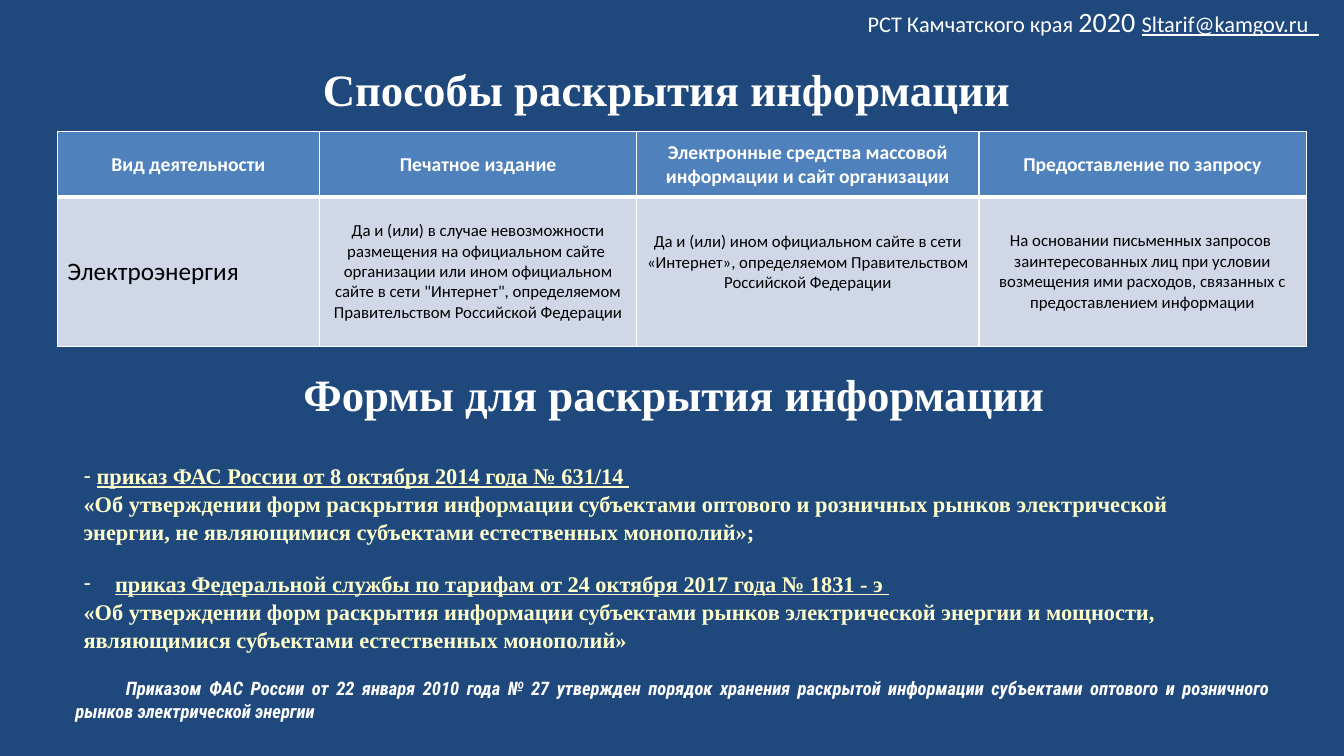
from dataclasses import dataclass

from lxml import etree
from pptx import Presentation
from pptx.dml.color import RGBColor
from pptx.enum import text as t
from pptx.oxml import ns
from pptx.util import Pt


@dataclass(frozen=True)
class Theme:
    """Colours, fonts and type sizes of the slide."""
    back: str = "1F497D"
    head: str = "4F81BD"
    cell: str = "D0D8E8"
    white: str = "FFFFFF"
    black: str = "000000"
    cream: str = "FFFFCC"
    sans: str = "Calibri"
    serif: str = "Times New Roman"
    narrow: str = "Roboto Condensed"
    title: float = 32
    year: float = 20
    row: float = 18
    body: float = 16
    label: float = 14
    note: float = 13.3
    small: float = 12


THEME = Theme()
LEFT, MID, RIGHT, FULL = (t.PP_ALIGN.LEFT, t.PP_ALIGN.CENTER,
                          t.PP_ALIGN.RIGHT, t.PP_ALIGN.JUSTIFY)


def write(frame, runs, size=THEME.body, font=THEME.sans, color=THEME.white,
          bold=False, italic=False, align=LEFT, pitch=1.0, gap=0,
          left=0, first=0, bullet=None):
    """Add a paragraph of (text, size or None, underline) runs to a frame."""
    para = frame.paragraphs[0]
    if para.runs:
        para = frame.add_paragraph()
    para.alignment, para.line_spacing = align, pitch
    para.space_before, para.space_after = Pt(gap), Pt(0)
    props = para._p.get_or_add_pPr()
    props.set("marL", str(Pt(left)))
    props.set("indent", str(Pt(first)))
    mark = etree.SubElement(props, ns.qn("a:buChar" if bullet else "a:buNone"))
    if bullet:
        mark.set("char", bullet)
    for words, own, under in [(runs, None, False)] if isinstance(runs, str) else runs:
        if words == "\n":
            para.add_line_break()
            continue
        run = para.add_run()
        run.text = words
        face = run.font
        face.name, face.size = font, Pt(own or size)
        face.bold, face.italic, face.underline = bold, italic, under
        face.color.rgb = RGBColor.from_string(color)


def place(shape, box):
    """Fit a text shape to a box and return its frame."""
    shape.left, shape.top, shape.width, shape.height = map(Pt, box)
    frame = shape.text_frame
    frame.word_wrap, frame.auto_size = True, t.MSO_AUTO_SIZE.NONE
    frame.vertical_anchor = t.MSO_ANCHOR.TOP
    frame.margin_left = frame.margin_right = Pt(7.2)
    frame.margin_top = frame.margin_bottom = Pt(3.6)
    return frame


def label(slide, box):
    """Add a text box and return its frame."""
    return place(slide.shapes.add_textbox(*map(Pt, box)), box)


def header(slide, box):
    """Write the agency, year and address."""
    write(label(slide, box), [("РСТ Камчатского края ", None, False),
                              ("2020 ", THEME.year, False),
                              ("Sltarif@kamgov.ru  ", None, True)], align=RIGHT)


def title(frame, words):
    """Write a section title."""
    write(frame, words, size=THEME.title, font=THEME.serif, bold=True, align=MID)


def edge(cell, widths):
    """Draw white cell borders with the given widths by side."""
    props = cell._tc.get_or_add_tcPr()
    for spot, (side, width) in enumerate(widths.items()):
        line = etree.Element(ns.qn("a:ln" + side), w=str(Pt(width)))
        fill = etree.SubElement(line, ns.qn("a:solidFill"))
        etree.SubElement(fill, ns.qn("a:srgbClr"), val=THEME.white)
        props.insert(spot, line)


def table(slide, box):
    """Build the table of disclosure methods."""
    rows = [
        ["Вид деятельности", "Печатное издание",
         "Электронные средства массовой информации и сайт организации",
         "Предоставление по запросу"],
        ["Электроэнергия",
         "Да и (или) в случае невозможности размещения на официальном сайте  "
         "организации или ином официальном сайте в сети \"Интернет\", "
         "определяемом Правительством Российской Федерации",
         "Да и (или) ином официальном сайте в сети «Интернет», определяемом "
         "Правительством Российской Федерации",
         "На основании письменных запросов  заинтересованных лиц при условии "
         "возмещения ими расходов, связанных с предоставлением информации"],
    ]
    grid = slide.shapes.add_table(2, 4, *map(Pt, box)).table
    for col, share in zip(grid.columns, (0.21, 0.254, 0.274, 0.262)):
        col.width = Pt(round(box[2] * share, 2))
    for row, share in zip(grid.rows, (0.305, 0.695)):
        row.height = Pt(round(box[3] * share, 2))
    for r, row in enumerate(rows):
        for c, words in enumerate(row):
            cell = grid.cell(r, c)
            cell.vertical_anchor = t.MSO_ANCHOR.MIDDLE
            cell.fill.solid()
            cell.fill.fore_color.rgb = RGBColor.from_string(
                THEME.cell if r else THEME.head)
            edge(cell, {"L": 1, "R": 1, "T": 3 if r else 1, "B": 1 if r else 3})
            if r == 0:
                size = THEME.label
            else:
                size = THEME.small if c else THEME.row
            write(cell.text_frame, words, size=size, bold=r == 0,
                  color=THEME.black if r else THEME.white,
                  align=LEFT if r and c == 0 else MID)
    grid.cell(1, 2).margin_bottom = Pt(17)


def orders(frame):
    """List the orders that set the forms."""
    look = dict(font=THEME.serif, color=THEME.cream, bold=True, pitch=1.05)
    write(frame, [
        (" ", None, False),
        ("приказ ФАС России от 8 октября 2014 года № 631/14 ", None, True),
        ("\n", None, False),
        ("«Об утверждении форм раскрытия информации субъектами оптового и "
         "розничных рынков электрической энергии, не являющимися субъектами "
         "естественных монополий»;", None, False)], bullet="-", **look)
    write(frame, [("приказ Федеральной службы по тарифам от 24 октября "
                   "2017 года № 1831 - э ", None, True)],
          bullet="-", left=22.5, first=-22.5, gap=16.5, **look)
    write(frame, "«Об утверждении форм раскрытия информации субъектами рынков "
          "электрической энергии и мощности, являющимися субъектами "
          "естественных монополий»", **look)


def note(slide, box):
    """Write the closing remark on storage."""
    write(label(slide, box),
          "Приказом ФАС России от 22 января 2010 года № 27 утвержден порядок "
          "хранения раскрытой информации субъектами оптового и розничного "
          "рынков электрической энергии", size=THEME.note, font=THEME.narrow,
          bold=True, italic=True, align=FULL, first=36, pitch=Pt(16.1))


def main():
    """Build and save the slide."""
    deck = Presentation()
    deck.slide_width, deck.slide_height = Pt(960), Pt(540)
    slide = deck.slides.add_slide(deck.slide_layouts[1])
    slide.background.fill.solid()
    slide.background.fill.fore_color.rgb = RGBColor.from_string(THEME.back)
    title(place(slide.shapes.title, (180.7, 40.3, 591, 46)),
          "Способы раскрытия информации")
    header(slide, (390, 0, 559, 31.5))
    table(slide, (41, 94, 892, 153.5))
    title(label(slide, (183, 258.5, 605, 46)), "Формы для раскрытия информации ")
    orders(place(slide.placeholders[1], (52.5, 325.5, 850, 140.5)))
    note(slide, (46.8, 480, 868, 39.5))
    deck.save("out.pptx")


if __name__ == "__main__":
    main()
